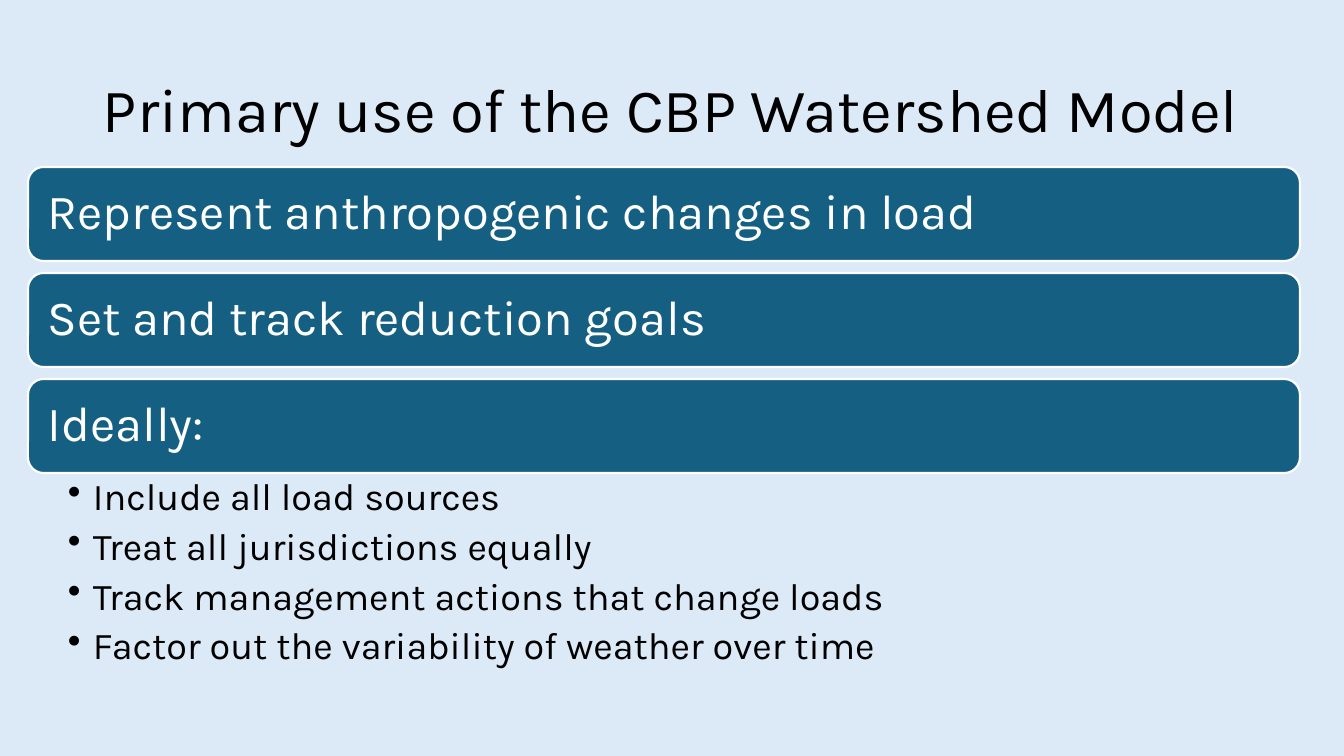
from lxml import etree
from pptx import Presentation
from pptx.dml.color import RGBColor
from pptx.enum.shapes import MSO_SHAPE
from pptx.enum.text import MSO_ANCHOR, PP_ALIGN
from pptx.oxml.ns import qn
from pptx.util import Pt

ROUNDED = MSO_SHAPE.ROUNDED_RECTANGLE
MIDDLE, TOP = MSO_ANCHOR.MIDDLE, MSO_ANCHOR.TOP
LEFT = PP_ALIGN.LEFT

SLIDE_W, SLIDE_H = 1344, 756
EMU_PER_PX = 12192000 / SLIDE_W

THEME = {
    "font": "Karla",
    "background": RGBColor(0xDC, 0xEA, 0xF7),
    "bar": RGBColor(0x15, 0x60, 0x82),
    "light": RGBColor(0xFF, 0xFF, 0xFF),
    "dark": RGBColor(0x00, 0x00, 0x00),
    "title_size": Pt(44),
    "bar_size": Pt(35),
    "bullet_size": Pt(27),
    "bullet_gap": Pt(6.3),
    "outline": Pt(1.5),
}


def px(length):
    return round(length * EMU_PER_PX)


def write(shape, lines, size, color, anchor, margins):
    """Fill a shape with left-aligned paragraphs; margins are left, top, right, bottom."""
    frame = shape.text_frame
    frame.text = "\n".join(lines)
    left, top, right, bottom = map(px, margins)
    frame_format = {
        "word_wrap": True, "vertical_anchor": anchor,
        "margin_left": left, "margin_top": top,
        "margin_right": right, "margin_bottom": bottom,
    }
    for name, value in frame_format.items():
        setattr(frame, name, value)
    for paragraph in frame.paragraphs:
        paragraph.alignment = LEFT
        paragraph.line_spacing = 0.9
        for name, value in {"name": THEME["font"], "size": size}.items():
            setattr(paragraph.font, name, value)
        paragraph.font.color.rgb = color
    return frame


prs = Presentation()
prs.slide_width, prs.slide_height = px(SLIDE_W), px(SLIDE_H)
slide = prs.slides.add_slide(prs.slide_layouts[6])
slide.background.fill.solid()
slide.background.fill.fore_color.rgb = THEME["background"]

# Title
title = slide.shapes.add_textbox(px(93), px(40), px(1159), px(146))
write(title, ["Primary use of the CBP Watershed Model"],
      THEME["title_size"], THEME["dark"], MIDDLE, (10, 5, 10, 5))

# Stacked bars
BAR_LEFT, BAR_TOP, BAR_W, BAR_H, BAR_PITCH = 28, 167, 1272, 94, 106
uses = ["Represent anthropogenic changes in load",
        "Set and track reduction goals",
        "Ideally:"]
for row, use in enumerate(uses):
    bar = slide.shapes.add_shape(ROUNDED, px(BAR_LEFT), px(BAR_TOP + row * BAR_PITCH),
                                 px(BAR_W), px(BAR_H))
    bar.shadow.inherit = False
    bar.fill.solid()
    bar.fill.fore_color.rgb = THEME["bar"]
    bar.line.color.rgb = THEME["light"]
    bar.line.width = THEME["outline"]
    write(bar, [use], THEME["bar_size"], THEME["light"], MIDDLE, (15, 15, 15, 15))

# Bulleted ideals below the last bar
ideals_top = BAR_TOP + (len(uses) - 1) * BAR_PITCH + BAR_H + 12
ideals = slide.shapes.add_textbox(px(BAR_LEFT), px(ideals_top - 12), px(BAR_W), px(208))
ideals_frame = write(ideals, [
    "Include all load sources",
    "Treat all jurisdictions equally",
    "Track management actions that change loads",
    "Factor out the variability of weather over time",
], THEME["bullet_size"], THEME["dark"], TOP, (40, 5, 27, 5))
for paragraph in ideals_frame.paragraphs:
    paragraph.space_after = THEME["bullet_gap"]
    properties = paragraph._p.get_or_add_pPr()
    properties.set("marL", str(px(25)))
    properties.set("indent", str(-px(25)))
    bullet = etree.Element(qn("a:buChar"), char="•")
    properties.find(qn("a:spcAft")).addnext(bullet)

prs.save("out.pptx")
